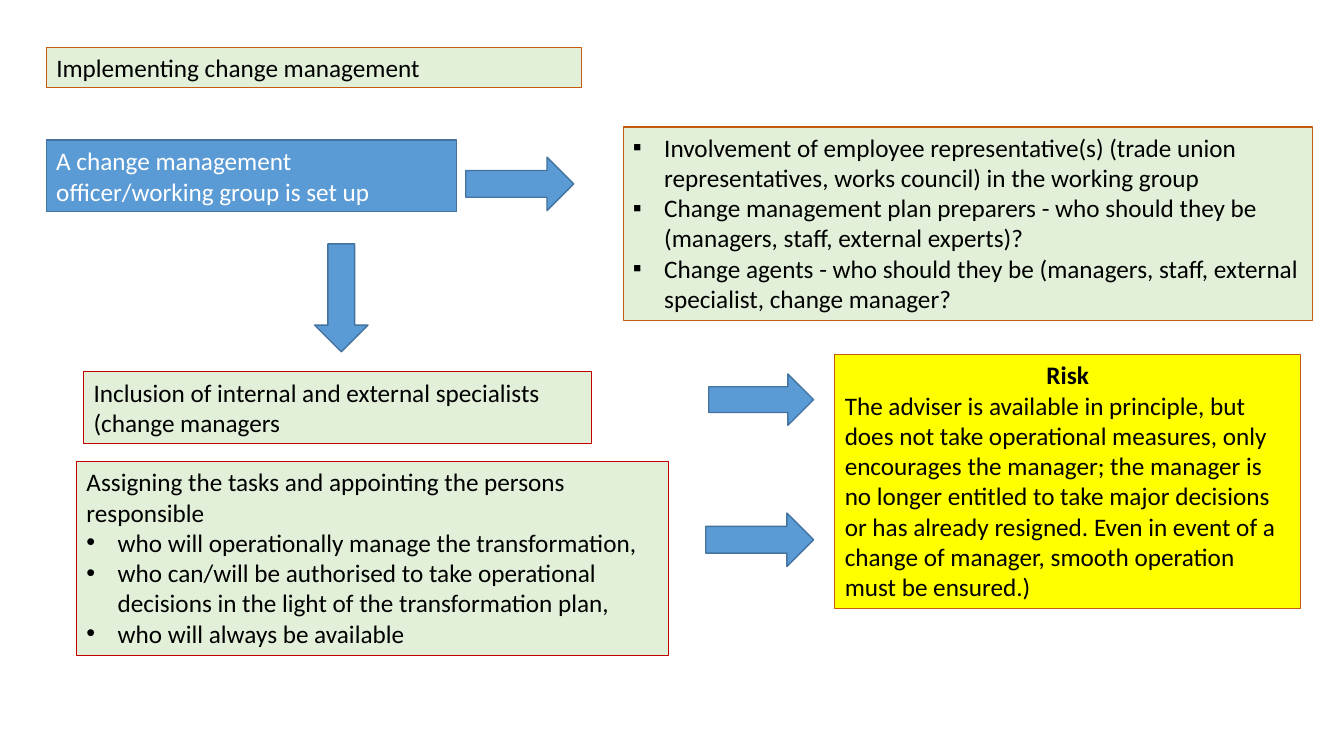
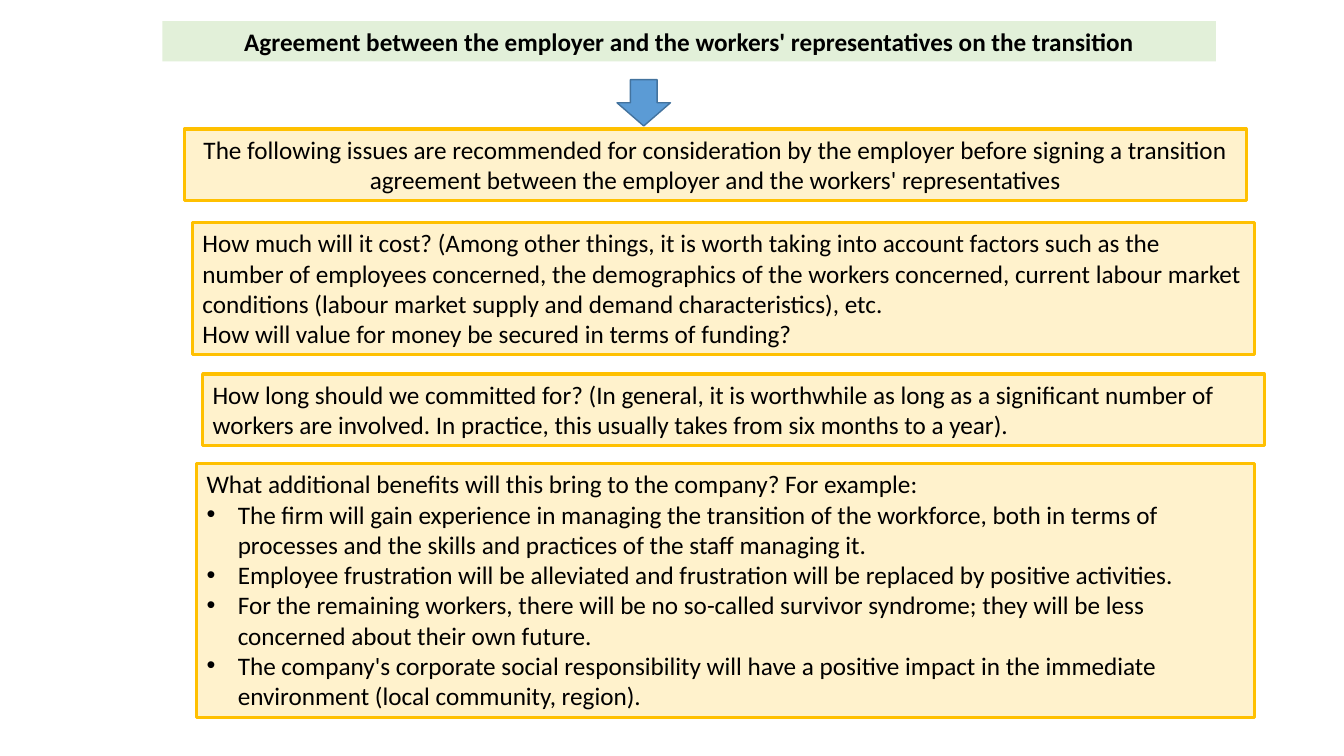
from dataclasses import dataclass
from typing import Optional

from lxml.etree import SubElement
from pptx import Presentation
from pptx.dml.color import RGBColor
from pptx.enum.shapes import MSO_SHAPE as Shape
from pptx.enum.text import MSO_ANCHOR as Anchor, MSO_AUTO_SIZE as AutoSize, PP_ALIGN as Align
from pptx.oxml.ns import qn
from pptx.util import Inches, Pt

# Shared colours and type
BLACK = RGBColor(0x00, 0x00, 0x00)
WHITE = RGBColor(0xFF, 0xFF, 0xFF)
PALE_GREEN = RGBColor(0xE2, 0xF0, 0xD9)
CREAM = RGBColor(0xFF, 0xF2, 0xCC)
YELLOW = RGBColor(0xFF, 0xFF, 0x00)
BLUE = RGBColor(0x5B, 0x9B, 0xD5)
DARK_BLUE = RGBColor(0x43, 0x73, 0x9E)
ORANGE = RGBColor(0xC5, 0x5A, 0x11)
RED = RGBColor(0xC0, 0x00, 0x00)
GOLD = RGBColor(0xFF, 0xC0, 0x00)
FONT = "Calibri"
TEXT_SIZE = Pt(18)
INDENT = Inches(0.31)


@dataclass(frozen=True)
class Style:
    fill: RGBColor
    line: Optional[RGBColor] = None
    width: float = 0.75
    text: RGBColor = BLACK
    anchor: Anchor = Anchor.TOP


@dataclass(frozen=True)
class Line:
    text: str
    bullet: str = ""
    bold: bool = False
    align: Align = Align.LEFT


TOPIC = Style(PALE_GREEN, ORANGE)
TASK = Style(PALE_GREEN, RED)
RISK = Style(YELLOW, ORANGE)
ACTION = Style(BLUE, DARK_BLUE, 1, WHITE, Anchor.MIDDLE)
HEADING = Style(PALE_GREEN)
ISSUE = Style(CREAM, GOLD, 2.25)


def bulleted(mark, *texts):
    return [Line(text, mark) for text in texts]


def add_block(slide, kind, box, style):
    """Draw one filled shape; box is left, top, width, height in inches."""
    block = slide.shapes.add_shape(kind, *map(Inches, box))
    block.shadow.inherit = False
    block.fill.solid()
    block.fill.fore_color.rgb = style.fill
    if style.line is None:
        block.line.fill.background()
    else:
        block.line.color.rgb = style.line
        block.line.width = Pt(style.width)
    return block


def add_arrow(slide, kind, box):
    add_block(slide, kind, box, ACTION)


def set_bullet(paragraph, mark):
    properties = paragraph._p.get_or_add_pPr()
    properties.set("marL", str(INDENT))
    properties.set("indent", str(-INDENT))
    SubElement(properties, qn("a:buFont")).set("typeface", "Arial")
    SubElement(properties, qn("a:buChar")).set("char", mark)


def add_panel(slide, box, style, lines):
    frame = add_block(slide, Shape.RECTANGLE, box, style).text_frame
    frame.word_wrap = True
    frame.auto_size = AutoSize.NONE
    frame.vertical_anchor = style.anchor
    frame.text = "\n".join(line.text for line in lines)
    for paragraph, line in zip(frame.paragraphs, lines):
        paragraph.alignment = line.align
        if line.bullet:
            set_bullet(paragraph, line.bullet)
        for run in paragraph.runs:
            run.font.name = FONT
            run.font.size = TEXT_SIZE
            run.font.bold = line.bold
            run.font.color.rgb = style.text


def add_working_group(slide, left, top):
    """Set-up step with arrows to its members and to the next step."""
    add_panel(slide, (left, top + 0.13, 4.07, 0.71), ACTION,
              [Line("A change management officer/working group is set up")])
    add_arrow(slide, Shape.RIGHT_ARROW, (left + 4.16, top + 0.3, 1.07, 0.53))
    add_arrow(slide, Shape.DOWN_ARROW, (left + 2.66, top + 1.16, 0.53, 1.07))
    add_panel(slide, (left + 5.72, top, 6.84, 1.92), TOPIC, bulleted(
        "▪",
        "Involvement of employee representative(s) (trade union representatives, "
        "works council) in the working group",
        "Change management plan preparers - who should they be "
        "(managers, staff, external experts)?",
        "Change agents - who should they be (managers, staff, external "
        "specialist, change manager?"))


def add_assignments(slide, left, top):
    """Specialists and tasks, each with an arrow to the shared risk."""
    add_panel(slide, (left + 0.07, top + 0.17, 5.04, 0.71), TASK, [
        Line("Inclusion of internal and external specialists"),
        Line("(change managers")])
    add_panel(slide, (left, top + 1.06, 5.87, 1.92), TASK, [
        Line("Assigning the tasks and appointing the persons responsible"),
        *bulleted(
            "•",
            "who will operationally manage the transformation,",
            "who can/will be authorised to take operational decisions in the "
            "light of the transformation plan,",
            "who will always be available")])
    add_arrow(slide, Shape.RIGHT_ARROW, (left + 6.27, top + 0.19, 1.04, 0.51))
    add_arrow(slide, Shape.RIGHT_ARROW, (left + 6.24, top + 1.57, 1.07, 0.53))
    add_panel(slide, (left + 7.52, top, 4.62, 2.52), RISK, [
        Line("Risk", bold=True, align=Align.CENTER),
        Line("The adviser is available in principle, but does not take operational "
             "measures, only encourages the manager; the manager is no longer "
             "entitled to take major decisions or has already resigned. Even in "
             "event of a change of manager, smooth operation must be ensured.)")])


def add_agreement_heading(slide, left, top):
    add_panel(slide, (left, top, 10.45, 0.4), HEADING, [
        Line("Agreement between the employer and the workers' representatives "
             "on the transition", bold=True, align=Align.CENTER)])
    add_arrow(slide, Shape.DOWN_ARROW, (left + 4.51, top + 0.58, 0.53, 0.46))


def add_issues(slide, left, top):
    """Stack of questions to settle before signing."""
    issues = [
        # left offset, top offset, width, height, lines
        (0, 0, 10.53, 0.71, [
            Line("The following issues are recommended for consideration by the "
                 "employer before signing a transition agreement between the "
                 "employer and the workers' representatives", align=Align.CENTER)]),
        (0.08, 0.93, 10.53, 1.31, [
            Line("How much will it cost? (Among other things, it is worth taking into "
                 "account factors such as the number of employees concerned, the "
                 "demographics of the workers concerned, current labour market "
                 "conditions (labour market supply and demand characteristics), etc."),
            Line("How will value for money be secured in terms of funding?")]),
        (0.18, 2.43, 10.53, 0.71, [
            Line("How long should we committed for? (In general, it is worthwhile as "
                 "long as a significant number of workers are involved. In practice, "
                 "this usually takes from six months to a year).")]),
        (0.12, 3.32, 10.49, 2.52, [
            Line("What additional benefits will this bring to the company? For example:"),
            *bulleted(
                "•",
                "The firm will gain experience in managing the transition of the "
                "workforce, both in terms of processes and the skills and practices "
                "of the staff managing it.",
                "Employee frustration will be alleviated and frustration will be "
                "replaced by positive activities.",
                "For the remaining workers, there will be no so-called survivor "
                "syndrome; they will be less concerned about their own future.",
                "The company's corporate social responsibility will have a positive "
                "impact in the immediate environment (local community, region).")]),
    ]
    for dx, dy, width, height, lines in issues:
        add_panel(slide, (left + dx, top + dy, width, height), ISSUE, lines)


def build_implementation(slide):
    add_panel(slide, (0.46, 0.47, 5.31, 0.4), TOPIC,
              [Line("Implementing change management")])
    add_working_group(slide, 0.46, 1.26)
    add_assignments(slide, 0.76, 3.52)


def build_agreement(slide):
    add_agreement_heading(slide, 1.61, 0.21)
    add_issues(slide, 1.83, 1.28)


def main():
    deck = Presentation()
    deck.slide_width, deck.slide_height = Inches(13.33), Inches(7.5)
    blank = deck.slide_layouts[6]
    for build in (build_implementation, build_agreement):
        build(deck.slides.add_slide(blank))
    deck.save("out.pptx")


if __name__ == "__main__":
    main()
